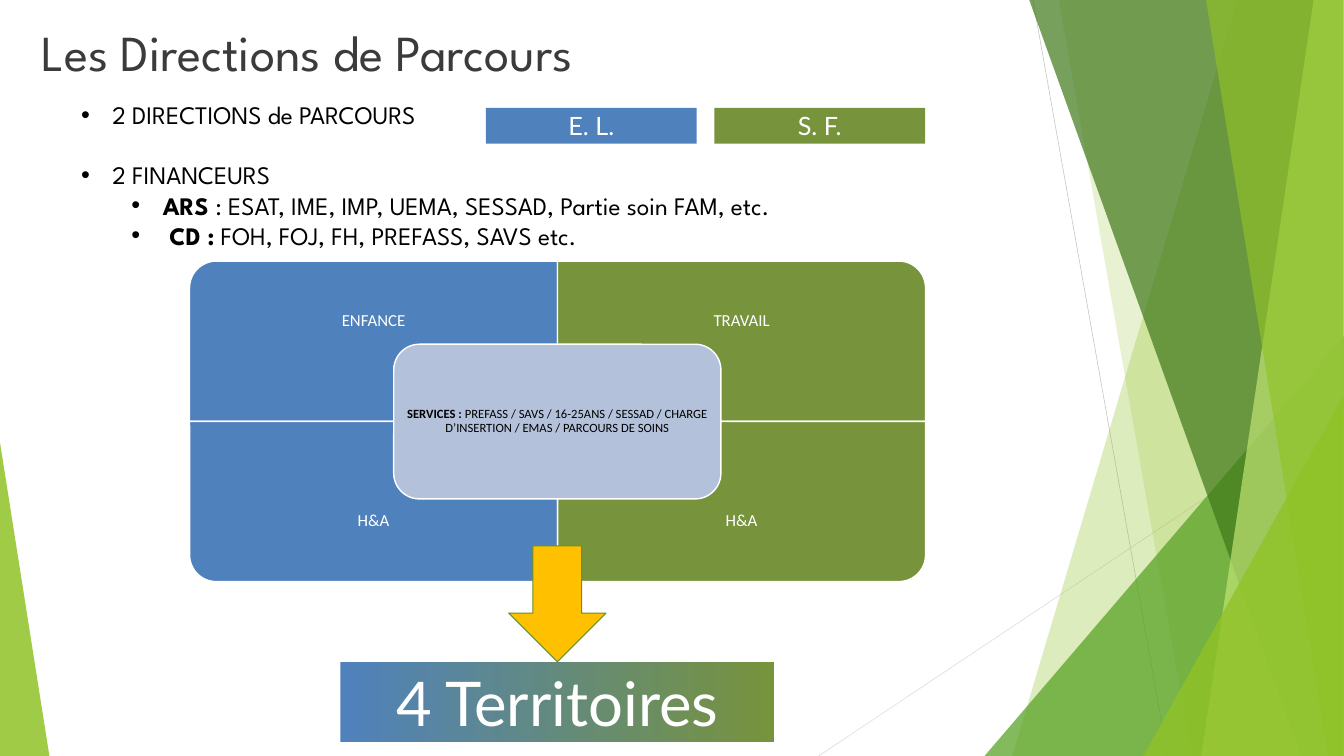
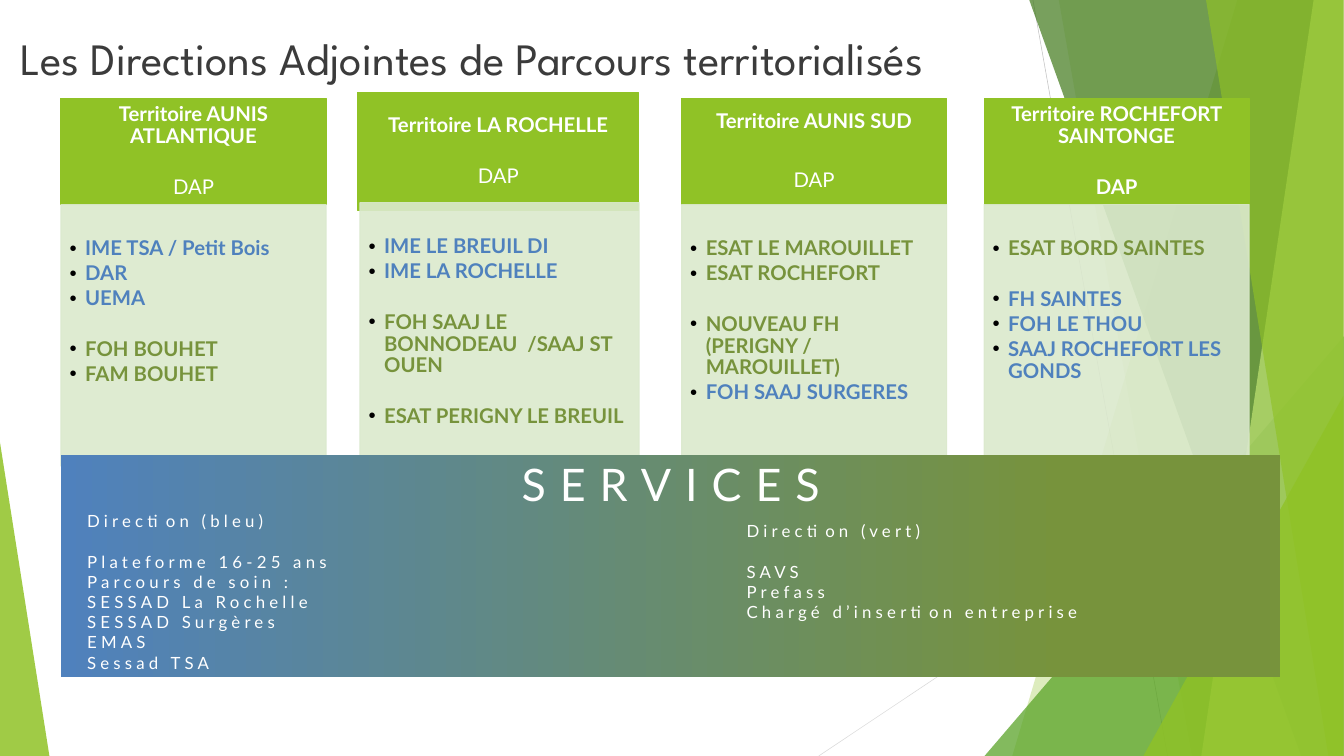
from dataclasses import dataclass
from typing import NamedTuple, Optional

import lxml.etree
import pptx
import pptx.dml.color
import pptx.enum.shapes
import pptx.enum.text
import pptx.oxml.ns
import pptx.util

PX = 9144
BLUE, OLIVE, LIME, MIST = "4F81BD", "77933C", "90C226", "DBE9CD"
WHITE, BLACK, CHARCOAL = "FFFFFF", "000000", "3B3B3B"
HEADING, BODY, DIAGRAM = "League Spartan", "Lato", "Calibri"
SHAPE = pptx.enum.shapes.MSO_SHAPE
ALIGN = pptx.enum.text.PP_ALIGN
ANCHOR = pptx.enum.text.MSO_ANCHOR


class Box(NamedTuple):
    left: int
    top: int
    width: int
    height: int


class Insets(NamedTuple):
    left: int = 10
    top: int = 5
    right: int = 10
    bottom: int = 5


class Run(NamedTuple):
    text: str
    bold: bool = False
    color: Optional[str] = None


@dataclass
class Para:
    runs: list[Run]
    before: float = 0
    indent: int = 0
    hanging: int = 0


@dataclass
class Style:
    font: str
    size: int
    color: str = WHITE
    align: ALIGN = ALIGN.LEFT
    anchor: ANCHOR = ANCHOR.TOP
    insets: Insets = Insets()
    line_spacing: Optional[float] = None
    after: float = 0
    tracking: int = 0


class Facet(NamedTuple):
    points: list[tuple[int, int]]
    color: str
    opacity: int


class Wedge(NamedTuple):
    box: Box
    apex: int
    color: str
    opacity: int


class Quadrant(NamedTuple):
    label: str
    column: int
    row: int
    rotation: int
    color: str


class Territory(NamedTuple):
    header: Box
    panel: Box
    heading: list[Para]
    sites: list[Para]


BACKDROP = [
    Facet([(2455, -2), (2665, -2), (2665, 1500), (2008, 1500)], LIME, 30),
    Facet([(2100, -2), (2666, -2), (2666, 1500), (2364, 1500)], LIME, 20),
    Wedge(Box(1953, 667, 713, 833), 1, "54A021", 72),
    Facet([(2041, -2), (2665, -2), (2665, 1500), (2581, 1500)], "3F7819", 70),
    Facet([(2606, -2), (2665, -2), (2665, 1500), (2383, 1500)], "C0E474", 70),
    Facet([(2392, -2), (2665, -2), (2665, 1500), (2635, 1500)], LIME, 65),
    Wedge(Box(2268, 785, 397, 715), 1, LIME, 80),
    Wedge(Box(0, 878, 98, 622), 0, LIME, 85),
]

BUTTON = Style(BODY, 36, align=ALIGN.CENTER, anchor=ANCHOR.MIDDLE)
BANNER = Style(BODY, 88, align=ALIGN.CENTER, anchor=ANCHOR.MIDDLE)
OUTLINE = Style(HEADING, 36, BLACK)
QUADRANT = Style(DIAGRAM, 24, align=ALIGN.CENTER, anchor=ANCHOR.MIDDLE,
                 insets=Insets(19, 19, 19, 19), line_spacing=0.9)
HUB = Style(DIAGRAM, 18, BLACK, ALIGN.CENTER, ANCHOR.MIDDLE, Insets(7, 7, 7, 7), 0.9)
TERRITORY = Style(BODY, 29, align=ALIGN.CENTER, anchor=ANCHOR.MIDDLE,
                  insets=Insets(23, 13, 23, 13), line_spacing=0.9)
SITES = Style(BODY, 29, insets=Insets(17, 67, 23, 25), line_spacing=0.9, after=4.4)
SERVICES = Style(BODY, 64, align=ALIGN.CENTER, tracking=20)
SERVICE_LIST = Style(BODY, 24, tracking=6)


def px(value: float) -> pptx.util.Emu:
    return pptx.util.Emu(round(value * PX))


def rgb(color: str) -> pptx.dml.color.RGBColor:
    return pptx.dml.color.RGBColor.from_string(color)


def tag(name: str) -> str:
    return pptx.oxml.ns.qn(f"a:{name}")


def lines(*texts: str, gap: float = 0) -> list[Para]:
    return [Para([Run(text)], gap if i == 1 else 0) for i, text in enumerate(texts)]


def add_bullet(paragraph, para: Para) -> None:
    props = paragraph._p.get_or_add_pPr()
    props.set("marL", str(px(para.indent)))
    props.set("indent", str(px(-para.hanging)))
    color = lxml.etree.SubElement(props, tag("buClr"))
    lxml.etree.SubElement(color, tag("srgbClr"), val=BLACK)
    lxml.etree.SubElement(props, tag("buFont"), typeface="Arial")
    lxml.etree.SubElement(props, tag("buChar"), char="•")


def write(shape, paras: list[Para], style: Style) -> None:
    frame = shape.text_frame
    frame.word_wrap = True
    frame.vertical_anchor = style.anchor
    frame.margin_left, frame.margin_top, frame.margin_right, frame.margin_bottom = map(px, style.insets)
    for i, para in enumerate(paras):
        paragraph = frame.add_paragraph() if i else frame.paragraphs[0]
        if para.hanging:
            add_bullet(paragraph, para)
        paragraph.alignment = style.align
        paragraph.space_before = pptx.util.Pt(para.before)
        paragraph.space_after = pptx.util.Pt(style.after)
        if style.line_spacing:
            paragraph.line_spacing = style.line_spacing
        for part in para.runs:
            run = paragraph.add_run()
            run.text = part.text
            run.font.name = style.font
            run.font.size = pptx.util.Pt(style.size)
            run.font.bold = part.bold
            run.font.color.rgb = rgb(part.color or style.color)
            if style.tracking:
                run.font._element.set("spc", str(style.tracking * 100))


def add_text(slide, box: Box, paras: list[Para], style: Style) -> None:
    write(slide.shapes.add_textbox(*map(px, box)), paras, style)


def paint(shape, color: str, line: Optional[str] = None, weight: float = 0, opacity: int = 100) -> None:
    shape.shadow.inherit = False
    shape.fill.solid()
    shape.fill.fore_color.rgb = rgb(color)
    if line:
        shape.line.color.rgb = rgb(line)
        shape.line.width = pptx.util.Pt(weight)
    else:
        shape.line.fill.background()
    if opacity < 100:
        for node in shape.element.spPr.iter(tag("srgbClr")):
            lxml.etree.SubElement(node, tag("alpha"), val=str(opacity * 1000))


def add_block(slide, kind: SHAPE, box: Box, color: str, line: Optional[str] = None,
              weight: float = 0, opacity: int = 100):
    shape = slide.shapes.add_shape(kind, *map(px, box))
    paint(shape, color, line, weight, opacity)
    return shape


def add_blend(slide, box: Box, end: float):
    band = add_block(slide, SHAPE.RECTANGLE, box, BLUE)
    band.fill.gradient()
    band.fill.gradient_angle = 0
    for stop, color, position in zip(band.fill.gradient_stops, (BLUE, OLIVE), (0, end)):
        stop.color.rgb = rgb(color)
        stop.position = position
    return band


def add_ray(slide, start: tuple[int, int], end: tuple[int, int], color: str) -> None:
    ray = slide.shapes.add_connector(pptx.enum.shapes.MSO_CONNECTOR.STRAIGHT,
                                     *map(px, start + end))
    ray.line.color.rgb = rgb(color)
    ray.line.width = pptx.util.Pt(0.75)
    lxml.etree.SubElement(ray.element.spPr, tag("effectLst"))


def add_slide(deck, title: str, title_box: Box, title_size: int):
    slide = deck.slides.add_slide(deck.slide_layouts[6])
    add_ray(slide, (2049, 0), (2316, 1500), "BFBFBF")
    add_ray(slide, (2665, 805), (1624, 1500), "D9D9D9")
    for piece in BACKDROP:
        if isinstance(piece, Facet):
            builder = slide.shapes.build_freeform(*piece.points[0], scale=PX)
            builder.add_line_segments(piece.points[1:], close=True)
            paint(builder.convert_to_shape(), piece.color, opacity=piece.opacity)
        else:
            wedge = add_block(slide, SHAPE.ISOSCELES_TRIANGLE, piece.box, piece.color,
                              opacity=piece.opacity)
            wedge.adjustments[0] = piece.apex
    add_text(slide, title_box, lines(title), Style(HEADING, title_size, CHARCOAL))
    return slide


def add_quadrant(slide, quadrant: Quadrant) -> None:
    width, height, label_height = 730, 318, 239
    left = 376 + quadrant.column * width
    top = 518 + quadrant.row * height
    box = Box(left, top, width, height)
    if quadrant.rotation % 180:
        shift = (width - height) // 2
        box = Box(left + shift, top - shift, height, width)
    corner = add_block(slide, SHAPE.ROUND_1_RECTANGLE, box, quadrant.color, WHITE, 2)
    corner.rotation = quadrant.rotation
    label_top = top + quadrant.row * (height - label_height)
    add_text(slide, Box(left, label_top, width, label_height), lines(quadrant.label), QUADRANT)


def build_directions(deck) -> None:
    slide = add_slide(deck, "Les Directions de Parcours", Box(72, 37, 1933, 144), 72)
    add_text(slide, Box(151, 192, 1928, 1282), [
        Para([Run("2 DIRECTIONS de PARCOURS")], 0, 62, 62),
        Para([Run("2 FINANCEURS")], 43, 62, 62),
        Para([Run("ARS ", True), Run(": ESAT, IME, IMP, UEMA, SESSAD, Partie soin FAM, etc.")], 0, 162, 62),
        Para([Run("CD :", True), Run(" FOH, FOJ, FH, PREFASS, SAVS etc.")], 0, 175, 75),
    ], OUTLINE)
    for quadrant in (
        Quadrant("ENFANCE", 0, 0, 270, BLUE),
        Quadrant("TRAVAIL", 1, 0, 0, OLIVE),
        Quadrant("H&A", 0, 1, 180, BLUE),
        Quadrant("H&A", 1, 1, 90, OLIVE),
    ):
        add_quadrant(slide, quadrant)
    hub = add_block(slide, SHAPE.ROUNDED_RECTANGLE, Box(781, 683, 649, 307), "B3C1DB", WHITE, 2)
    write(hub, [Para([
        Run("SERVICES : ", True),
        Run("PREFASS / SAVS / 16-25ANS / SESSAD / CHARGE D’INSERTION / EMAS / PARCOURS DE SOINS"),
    ])], HUB)
    for director, left, color in (("E. L.", 964, BLUE), ("S. F.", 1417, OLIVE)):
        write(add_block(slide, SHAPE.RECTANGLE, Box(left, 214, 418, 71), color),
              lines(director), BUTTON)
    add_block(slide, SHAPE.DOWN_ARROW, Box(1009, 1083, 193, 230), "FFC000", "6B901C", 1.5)
    write(add_blend(slide, Box(675, 1314, 861, 158), 1), lines("4 Territoires"), BANNER)


def heading(name: str, gap: float = 41.5, bold_role: bool = False) -> list[Para]:
    return [Para([Run(name, True)]), Para([Run("DAP", bold_role)], gap)]


def sites(*groups: list[tuple[str, str]]) -> list[Para]:
    return [Para([Run(name, True, color)], 36 if g and not i else 0, 31, 31)
            for g, group in enumerate(groups) for i, (name, color) in enumerate(group)]


def header_at(left: int) -> Box:
    return Box(left, 195, 526, 211)


def panel_at(left: int) -> Box:
    return Box(left, 406, 526, 519)


def build_territories(deck) -> None:
    slide = add_slide(deck, "Les Directions Adjointes de Parcours territorialisés",
                      Box(30, 56, 2131, 191), 64)
    territories = [
        Territory(header_at(121), panel_at(121), heading("Territoire AUNIS ATLANTIQUE"), sites(
            [("IME TSA / Petit Bois", BLUE), ("DAR", BLUE), ("UEMA", BLUE)],
            [("FOH BOUHET", OLIVE), ("FAM BOUHET", OLIVE)])),
        Territory(Box(710, 184, 557, 233), Box(714, 402, 554, 519),
                  heading("Territoire LA ROCHELLE"), sites(
            [("IME LE BREUIL DI", BLUE), ("IME LA ROCHELLE", BLUE)],
            [("FOH SAAJ LE BONNODEAU  /SAAJ ST OUEN", OLIVE)],
            [("ESAT PERIGNY LE BREUIL", OLIVE)])),
        Territory(header_at(1352), panel_at(1352), heading("Territoire AUNIS SUD", 52), sites(
            [("ESAT LE MAROUILLET", OLIVE), ("ESAT ROCHEFORT", OLIVE)],
            [("NOUVEAU FH (PERIGNY / MAROUILLET)", OLIVE), ("FOH SAAJ SURGERES", BLUE)])),
        Territory(header_at(1952), panel_at(1952),
                  heading("Territoire ROCHEFORT SAINTONGE", bold_role=True), sites(
            [("ESAT BORD SAINTES", OLIVE)],
            [("FH SAINTES", BLUE), ("FOH LE THOU", BLUE), ("SAAJ ROCHEFORT LES GONDS", BLUE)])),
    ]
    for territory in territories:
        write(add_block(slide, SHAPE.RECTANGLE, territory.header, LIME, LIME, 1.5),
              territory.heading, TERRITORY)
        write(add_block(slide, SHAPE.RECTANGLE, territory.panel, MIST, MIST, 1.5, 90),
              territory.sites, SITES)
    write(add_blend(slide, Box(121, 902, 2419, 441), 0.82), lines("SERVICES"), SERVICES)
    add_text(slide, Box(163, 1009, 1101, 333), lines(
        "Direction (bleu)", "Plateforme 16-25 ans", "Parcours de soin :", "SESSAD La Rochelle",
        "SESSAD Surgères", "EMAS", "Sessad TSA", gap=29), SERVICE_LIST)
    add_text(slide, Box(1471, 1029, 1111, 252), lines(
        "Direction (vert)", "SAVS", "Prefass", "Chargé d’insertion entreprise", gap=29), SERVICE_LIST)


def main() -> None:
    deck = pptx.Presentation()
    deck.slide_width, deck.slide_height = px(2666), px(1500)
    build_directions(deck)
    build_territories(deck)
    deck.save("out.pptx")


if __name__ == "__main__":
    main()
